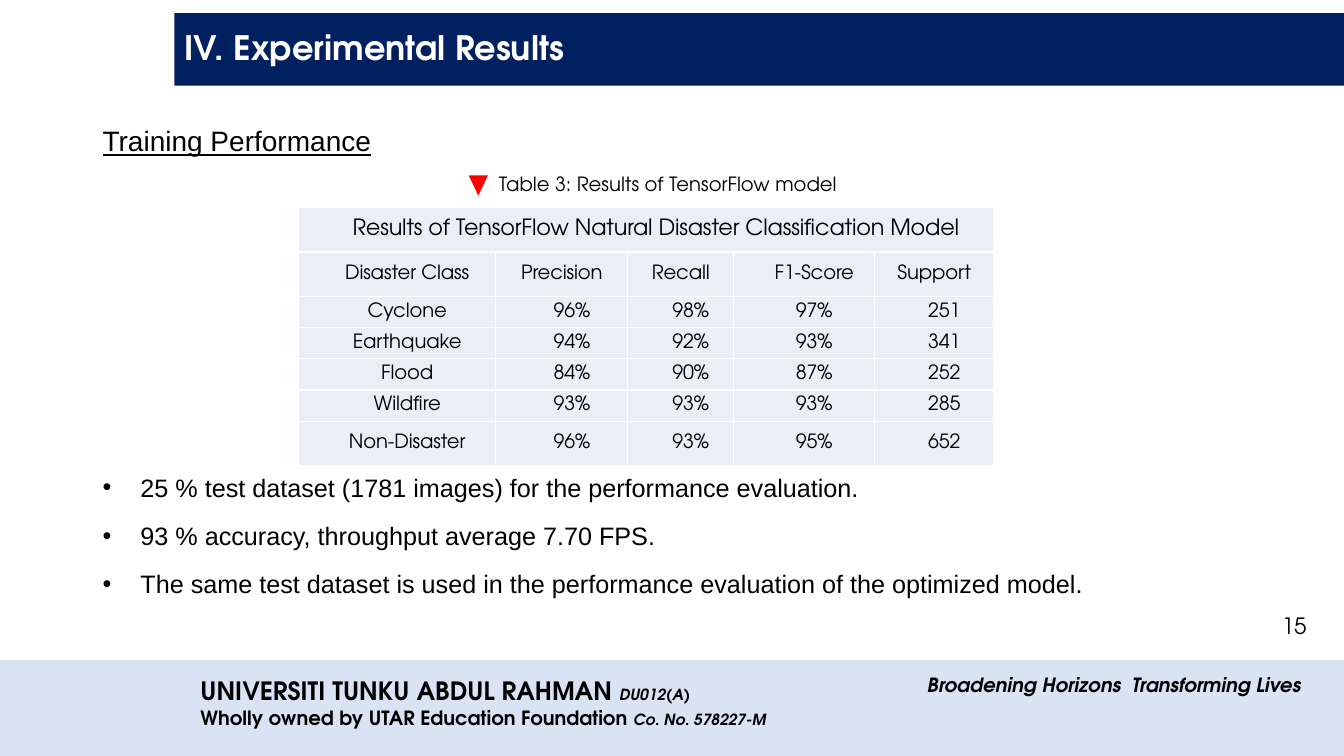
"""Build the experimental results slide with its table of model scores."""
from lxml.etree import SubElement
from pptx import Presentation
from pptx.dml.color import RGBColor
from pptx.enum.shapes import MSO_SHAPE
from pptx.enum.text import MSO_ANCHOR, PP_ALIGN
from pptx.oxml.ns import qn
from pptx.util import Pt

COLORS = {
    "navy": "002060", "band": "DAE3F3", "cell": "EAEFF7",
    "marker": "FF0000", "black": "000000", "white": "FFFFFF",
}
DISPLAY, BODY = "TeX Gyre Adventor", "Arial"

TITLE = "IV. Experimental Results"
SUBHEAD = "Training Performance"
CAPTION = "Table 3: Results of TensorFlow model"
TABLE_TITLE = "Results of TensorFlow Natural Disaster Classification Model"
SCORES = [
    ("Disaster Class", "Precision", "Recall", "F1-Score", "Support"),
    ("Cyclone", "96%", "98%", "97%", "251"),
    ("Earthquake", "94%", "92%", "93%", "341"),
    ("Flood", "84%", "90%", "87%", "252"),
    ("Wildfire", "93%", "93%", "93%", "285"),
    ("Non-Disaster", "96%", "93%", "95%", "652"),
]
UNINDENTED = {"Precision", "Recall", "Support"}
COLUMN_WIDTHS = [141.1, 94.3, 75.6, 100.8, 85]
ROW_HEIGHTS = [31.7, 31.7, 22.3, 22.3, 22.3, 22.3, 31.7]
FINDINGS = [
    "25 % test dataset (1781 images) for the performance evaluation.",
    "93 % accuracy, throughput average 7.70 FPS.",
    "The same test dataset is used in the performance evaluation of the optimized model.",
]
MOTTO = "Broadening Horizons  Transforming Lives"
OWNERS = [
    ("UNIVERSITI TUNKU ABDUL RAHMAN ", 18, "DU012(A)", (136.1, 478.8, 366.5, 28.8)),
    ("Wholly owned by UTAR Education Foundation ", 14, "Co. No. 578227-M",
     (136.1, 500.4, 426.2, 24.5)),
]
PAGE = "15"


def rgb(name):
    return RGBColor.from_string(COLORS[name])


def style(run, size, face=DISPLAY, color="black", bold=False, italic=False):
    font = run.font
    font.size, font.name = Pt(size), face
    font.bold, font.italic = bold, italic
    font.color.rgb = rgb(color)


def add_text(slide, box, lines, size, face=DISPLAY, wrap=True, align=PP_ALIGN.LEFT, **look):
    frame = slide.shapes.add_textbox(*map(Pt, box)).text_frame
    frame.word_wrap = wrap
    frame.text = "\n".join(lines)
    for paragraph in frame.paragraphs:
        paragraph.alignment = align
        style(paragraph.runs[0], size, face, **look)
    return frame


def add_block(slide, kind, box, color):
    block = slide.shapes.add_shape(kind, *map(Pt, box))
    block.shadow.inherit = False
    block.fill.solid()
    block.fill.fore_color.rgb = rgb(color)
    block.line.fill.background()
    return block


def add_title(slide):
    title = slide.shapes.title
    title.left, title.top, title.width, title.height = map(Pt, (124.6, 9.4, 835.9, 51.8))
    title.fill.solid()
    title.fill.fore_color.rgb = rgb("navy")
    title.text_frame.text = TITLE
    title.text_frame.vertical_anchor = MSO_ANCHOR.MIDDLE
    heading = title.text_frame.paragraphs[0]
    heading.alignment, heading.line_spacing = PP_ALIGN.LEFT, 0.9
    style(heading.runs[0], 24, color="white", bold=True)


def fill_cell(cell, words, size):
    cell.margin_left = cell.margin_right = Pt(0.72)
    cell.margin_top = cell.margin_bottom = Pt(0)
    cell.vertical_anchor = MSO_ANCHOR.MIDDLE
    properties = cell._tc.get_or_add_tcPr()
    for side in ("lnL", "lnR", "lnT", "lnB"):
        line = SubElement(properties, qn(f"a:{side}"), w=str(Pt(1)))
        SubElement(SubElement(line, qn("a:solidFill")), qn("a:srgbClr"), val=COLORS["white"])
    cell.fill.solid()
    cell.fill.fore_color.rgb = rgb("cell")
    if not words:
        return
    cell.text_frame.text = words
    paragraph = cell.text_frame.paragraphs[0]
    paragraph.alignment = PP_ALIGN.CENTER
    paragraph.line_spacing, paragraph.space_after = 0.95, Pt(6)
    if words not in UNINDENTED:
        paragraph._p.get_or_add_pPr().set("indent", str(Pt(14.4)))
    style(paragraph.runs[0], size)
    paragraph.runs[0]._r.get_or_add_rPr().set("spc", "-10")


def add_scores(slide):
    rows = [(TABLE_TITLE, "", "", "", "")] + SCORES
    box = (213.1, 148.3, sum(COLUMN_WIDTHS), sum(ROW_HEIGHTS))
    table = slide.shapes.add_table(len(rows), len(COLUMN_WIDTHS), *map(Pt, box)).table
    for column, width in zip(table.columns, COLUMN_WIDTHS):
        column.width = Pt(width)
    for row, height, values in zip(table.rows, ROW_HEIGHTS, rows):
        row.height = Pt(height)
        for cell, value in zip(row.cells, values):
            fill_cell(cell, value, 16 if value == TABLE_TITLE else 14)
    table.cell(0, 0).merge(table.cell(0, len(COLUMN_WIDTHS) - 1))


def add_findings(slide):
    frame = add_text(slide, (66.2, 333.7, 791.3, 97), FINDINGS, 18, BODY, align=PP_ALIGN.JUSTIFY)
    for index, paragraph in enumerate(frame.paragraphs):
        properties = paragraph._p.get_or_add_pPr()
        properties.set("marL", str(Pt(27)))
        properties.set("indent", str(Pt(-27)))
        SubElement(properties, qn("a:buFont"), typeface=BODY)
        SubElement(properties, qn("a:buChar"), char="•")
        if index:
            paragraph.space_before = Pt(12.8)


def add_footer(slide):
    add_block(slide, MSO_SHAPE.RECTANGLE, (0, 471.6, 960, 68.4), "band")
    add_text(slide, (655.2, 477.4, 283, 24.5), [MOTTO], 14, wrap=False, bold=True, italic=True)
    for owner, size, number, box in OWNERS:
        frame = add_text(slide, box, [owner], size, wrap=False, bold=True)
        registration = frame.paragraphs[0].add_run()
        registration.text = number
        style(registration, 11, bold=True, italic=True)


def main():
    deck = Presentation()
    deck.slide_width, deck.slide_height = Pt(960), Pt(540)
    slide = deck.slides.add_slide(deck.slide_layouts[5])
    add_footer(slide)
    add_title(slide)
    subhead = add_text(slide, (66.2, 85, 799.2, 30.2), [SUBHEAD], 20, BODY)
    subhead.paragraphs[0].runs[0].font.underline = True
    add_findings(slide)
    add_scores(slide)
    add_text(slide, (349.2, 119.5, 262.1, 24.5), [CAPTION], 14)
    marker = add_block(slide, MSO_SHAPE.ISOSCELES_TRIANGLE, (334.8, 125.3, 13.7, 14.4), "marker")
    marker.rotation = 180
    add_text(slide, (902.2, 433.4, 38.2, 26.6), [PAGE], 16, align=PP_ALIGN.RIGHT)
    deck.save("out.pptx")


if __name__ == "__main__":
    main()
